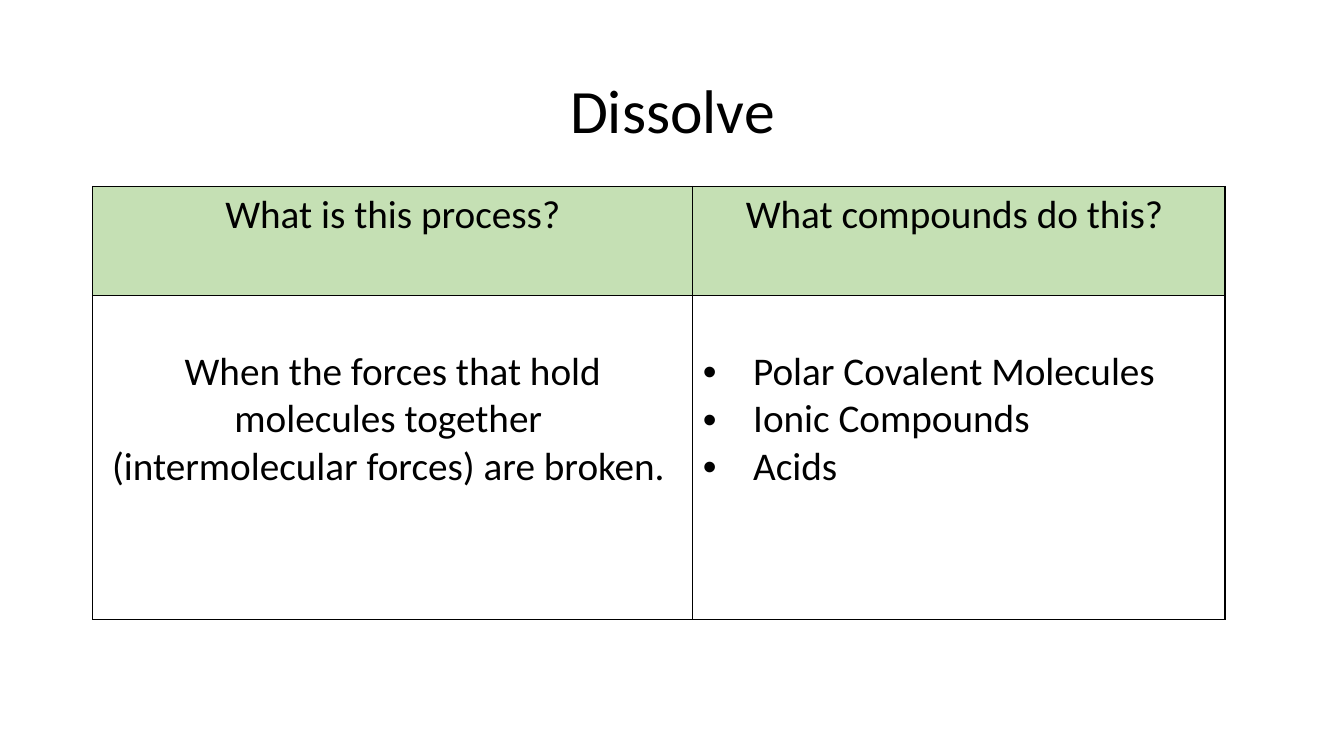
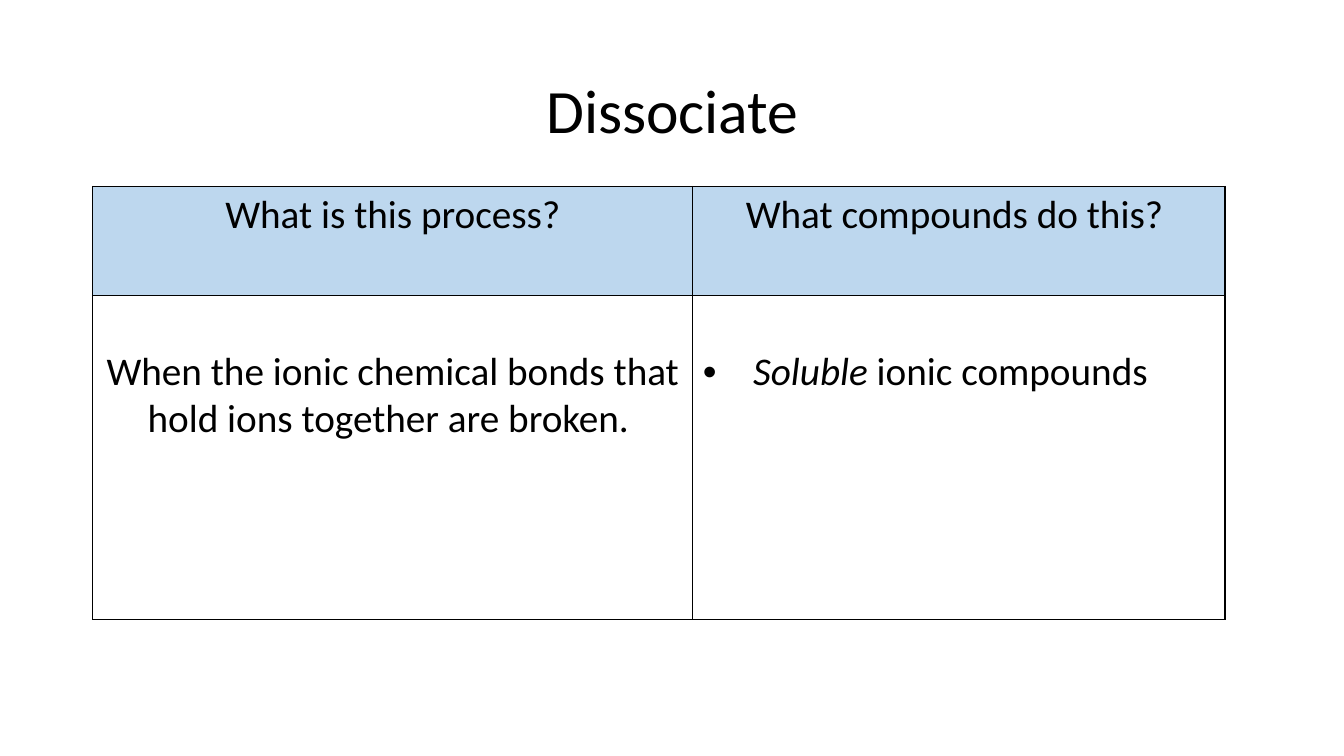
from dataclasses import dataclass

from lxml.etree import SubElement as Sub
from pptx import Presentation
from pptx.dml.color import RGBColor
from pptx.enum.text import MSO_ANCHOR as Anchor, PP_ALIGN as Align
from pptx.oxml import parse_xml
from pptx.oxml.ns import nsdecls, qn
from pptx.util import Inches, Pt

BLACK = RGBColor(0x00, 0x00, 0x00)
GREEN = RGBColor(0xC5, 0xE0, 0xB4)
BLUE = RGBColor(0xBD, 0xD7, 0xEE)
FONT = "Calibri"
LEFT, TOP = 0.92, 1.85
COLS = (5.95, 5.28)
ROWS = (1.08, 3.22)
GAP = 0.52
HEADS = ("What is this process?", "What compounds do this? ")


@dataclass
class Topic:
    title: str
    color: RGBColor
    process: str
    items: list[str]


TOPICS = [
    Topic("Dissolve", GREEN,
          "When the forces that hold molecules together \n"
          "(intermolecular forces) are broken. ",
          ["Polar Covalent Molecules", "Ionic Compounds", "Acids"]),
    Topic("Dissociate", BLUE,
          "When the ionic chemical bonds that hold ions together are broken. ",
          ["*Soluble* ionic compounds"]),
]


def put(para, text: str, size: float = 28, align=Align.CENTER,
        space: float | None = None, bullet: bool = False) -> None:
    """Write text; asterisks enclose italics and a newline breaks the line."""
    para.alignment = align
    para.line_spacing = space
    for i, part in enumerate(text.split("*")):
        for j, line in enumerate(part.split("\n")):
            if j:
                para.add_line_break()
            if line:
                run = para.add_run()
                run.text = line
                font = run.font
                font.name, font.size = FONT, Pt(size)
                font.color.rgb = BLACK
                font.italic = i % 2 == 1
    if bullet:
        props = para._p.get_or_add_pPr()
        props.set("marL", str(Inches(0.5)))
        props.set("indent", str(Inches(-0.5)))
        Sub(props, qn("a:buFont"), typeface="Arial")
        Sub(props, qn("a:buChar"), char="•")


def frame(cell) -> None:
    """Draw a thin line on all four sides of a cell."""
    props = cell._tc.get_or_add_tcPr()
    for i, side in enumerate("LRTB"):
        props.insert(i, parse_xml(
            f'<a:ln{side} {nsdecls("a")} w="{Pt(1)}"><a:solidFill>'
            f'<a:srgbClr val="{BLACK}"/></a:solidFill></a:ln{side}>'))


def add_grid(slide, topic: Topic) -> None:
    table = slide.shapes.add_table(
        len(ROWS), len(COLS), Inches(LEFT), Inches(TOP),
        Inches(sum(COLS)), Inches(sum(ROWS))).table
    table.first_row = table.horz_banding = False
    for col, width in zip(table.columns, COLS):
        col.width = Inches(width)
    for row, height in zip(table.rows, ROWS):
        row.height = Inches(height)

    for i, head in enumerate(HEADS):
        top, low = table.cell(0, i), table.cell(1, i)
        top.fill.solid()
        top.fill.fore_color.rgb = topic.color
        low.fill.background()
        low.margin_top = Inches(GAP)
        frame(top)
        frame(low)
        put(top.text_frame.paragraphs[0], head)

    put(table.cell(1, 0).text_frame.paragraphs[0], topic.process)
    body = table.cell(1, 1).text_frame
    for i, item in enumerate(topic.items):
        para = body.add_paragraph() if i else body.paragraphs[0]
        put(para, item, align=Align.LEFT, bullet=True)


def add_topic(deck, topic: Topic) -> None:
    slide = deck.slides.add_slide(deck.slide_layouts[5])
    title = slide.shapes.title
    title.left, title.top = Inches(LEFT), Inches(0.4)
    title.width, title.height = Inches(11.5), Inches(1.45)
    title.text_frame.vertical_anchor = Anchor.MIDDLE
    put(title.text_frame.paragraphs[0], topic.title, size=44, space=0.9)
    add_grid(slide, topic)


def main() -> None:
    deck = Presentation()
    deck.slide_width, deck.slide_height = Inches(13.33), Inches(7.5)
    for topic in TOPICS:
        add_topic(deck, topic)
    deck.save("out.pptx")


if __name__ == "__main__":
    main()
